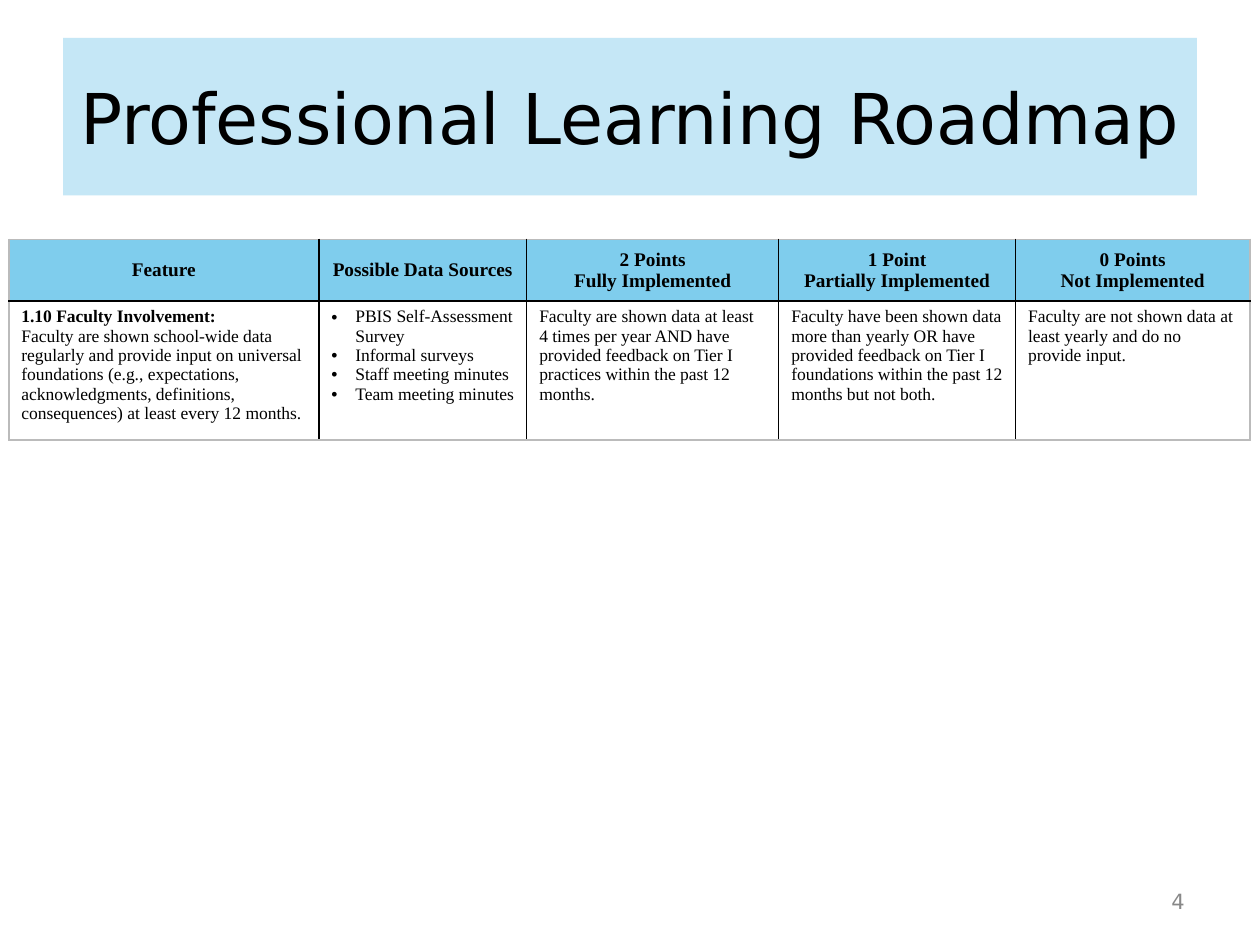
from lxml import etree
from pptx import Presentation
from pptx.dml.color import RGBColor
from pptx.enum.text import MSO_ANCHOR, MSO_AUTO_SIZE, PP_ALIGN
from pptx.oxml.ns import qn
from pptx.util import Inches, Pt

CENTER, LEFT, RIGHT = PP_ALIGN.CENTER, PP_ALIGN.LEFT, PP_ALIGN.RIGHT
MIDDLE, TOP = MSO_ANCHOR.MIDDLE, MSO_ANCHOR.TOP
NO_FIT = MSO_AUTO_SIZE.NONE

HEADINGS = [
    ["Feature"],
    ["Possible Data Sources"],
    ["2 Points", "Fully Implemented"],
    ["1 Point", "Partially Implemented"],
    ["0 Points", "Not Implemented"],
]
FACULTY_INVOLVEMENT = [
    ["1.10 Faculty Involvement:",
     "Faculty are shown school-wide data regularly and provide input on universal "
     "foundations (e.g., expectations, acknowledgments, definitions, consequences) "
     "at least every 12 months."],
    ["PBIS Self-Assessment Survey", "Informal surveys",
     "Staff meeting minutes", "Team meeting minutes"],
    ["Faculty are shown data at least 4 times per year AND have provided feedback "
     "on Tier I practices within the past 12 months."],
    ["Faculty have been shown data more than yearly OR have provided feedback on "
     "Tier I foundations within the past 12 months but not both."],
    ["Faculty are not shown data at least yearly and do no provide input."],
]
COLUMN_WIDTHS = [2.46, 1.65, 2, 1.88, 1.86]
ROW_HEIGHTS = [0.49, 1.02]
FEATURE, SOURCES = 0, 1


def color(hex_string):
    return RGBColor.from_string(hex_string)


class RoadmapSlide:
    heading_font = "DejaVu Sans"
    table_font = "Times New Roman"
    ink = "000000"
    muted = "888888"
    banner = "A9DCF2"
    header_fill = "7FCDED"
    outer_border = "BBBBBB"

    def __init__(self, presentation):
        self.slide = presentation.slides.add_slide(presentation.slide_layouts[5])

    def format_paragraph(self, paragraph, font, size, hex_color, align, bold=False):
        paragraph.alignment = align
        paragraph.font.name = font
        paragraph.font.size = Pt(size)
        paragraph.font.bold = bold
        paragraph.font.color.rgb = color(hex_color)

    def add_title(self, text, left, top, width, height):
        title = self.slide.shapes.title
        title.left, title.top = Inches(left), Inches(top)
        title.width, title.height = Inches(width), Inches(height)
        title.fill.solid()
        title.fill.fore_color.rgb = color(self.banner)
        banner_color = title.fill._xPr.find(qn("a:solidFill"))[0]
        etree.SubElement(banner_color, qn("a:alpha"), val="67000")
        frame = title.text_frame
        frame.text = text
        frame.auto_size = NO_FIT
        frame.word_wrap = True
        frame.vertical_anchor = MIDDLE
        self.format_paragraph(frame.paragraphs[0], self.heading_font, 40, self.ink, CENTER)

    def add_page_number(self, text, left, top, width, height):
        number = self.slide.shapes.add_textbox(
            Inches(left), Inches(top), Inches(width), Inches(height))
        frame = number.text_frame
        frame.text = text
        frame.word_wrap = True
        frame.vertical_anchor = MIDDLE
        self.format_paragraph(frame.paragraphs[0], self.heading_font, 12, self.muted, RIGHT)

    def add_bullet(self, paragraph):
        properties = paragraph._p.get_or_add_pPr()
        properties.set("marL", str(Inches(0.19)))
        properties.set("indent", str(-Inches(0.19)))
        bullet_color = etree.SubElement(properties, qn("a:buClr"))
        etree.SubElement(bullet_color, qn("a:srgbClr"), val=self.ink)
        etree.SubElement(properties, qn("a:buFont"), typeface="Arial")
        etree.SubElement(properties, qn("a:buChar"), char="•")

    def set_borders(self, cell, outer_sides):
        properties = cell._tc.get_or_add_tcPr()
        for position, side in enumerate(("lnL", "lnR", "lnT", "lnB")):
            line = etree.Element(qn(f"a:{side}"), w=str(Pt(1)))
            fill = etree.SubElement(line, qn("a:solidFill"))
            border = self.outer_border if side in outer_sides else self.ink
            etree.SubElement(fill, qn("a:srgbClr"), val=border)
            properties.insert(position, line)

    def fill_cell(self, cell, lines, is_header, column):
        cell.text = "\n".join(lines)
        cell.vertical_anchor = MIDDLE if is_header else TOP
        if is_header:
            cell.fill.solid()
            cell.fill.fore_color.rgb = color(self.header_fill)
        else:
            cell.fill.background()
        for index, paragraph in enumerate(cell.text_frame.paragraphs):
            if column == SOURCES and not is_header:
                self.add_bullet(paragraph)
            bold = is_header or (column == FEATURE and index == 0)
            self.format_paragraph(paragraph, self.table_font, 11 if is_header else 10,
                                  self.ink, CENTER if is_header else LEFT, bold)

    def add_rubric(self, rows, left, top, widths, heights):
        rubric = self.slide.shapes.add_table(
            len(rows), len(widths), Inches(left), Inches(top),
            Inches(sum(widths)), Inches(sum(heights))).table
        rubric.horz_banding = False
        for column, width in zip(rubric.columns, widths):
            column.width = Inches(width)
        for row, height in zip(rubric.rows, heights):
            row.height = Inches(height)
        for r, row in enumerate(rows):
            for c, lines in enumerate(row):
                cell = rubric.cell(r, c)
                self.fill_cell(cell, lines, r == 0, c)
                edges = {"lnL": c == 0, "lnR": c == len(widths) - 1,
                         "lnT": r == 0, "lnB": r == len(rows) - 1}
                self.set_borders(cell, [side for side, outer in edges.items() if outer])


def main():
    presentation = Presentation()
    presentation.slide_width, presentation.slide_height = Inches(10), Inches(7.5)
    roadmap = RoadmapSlide(presentation)
    roadmap.add_title("Professional Learning Roadmap", 0.5, 0.3, 9, 1.25)
    roadmap.add_page_number("4", 7.17, 6.95, 2.33, 0.4)
    roadmap.add_rubric([HEADINGS, FACULTY_INVOLVEMENT], 0.07, 1.9,
                       COLUMN_WIDTHS, ROW_HEIGHTS)
    presentation.save("out.pptx")


if __name__ == "__main__":
    main()
